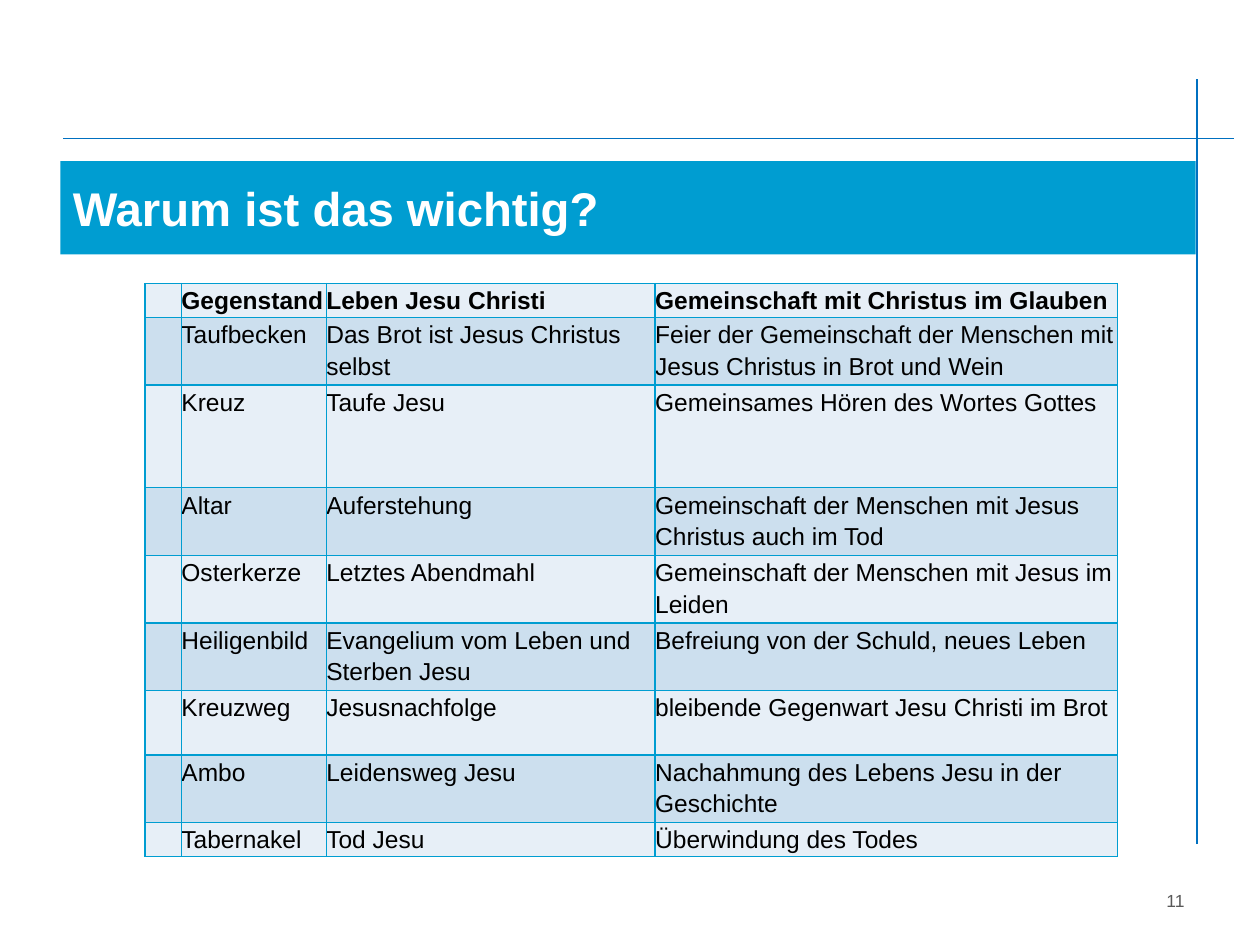
from typing import NamedTuple

from lxml import etree
from pptx import Presentation
from pptx import util as u
from pptx.dml.color import RGBColor
from pptx.enum import shapes, text
from pptx.oxml.ns import qn

WIDE, HIGH = 10, 7.5
FONT = "Arial"
HEX = {
    "band": "009DD1", "rule": "0070C0", "white": "FFFFFF", "black": "000000",
    "grey": "595959", "pale": "E7EFF7", "blue": "CCDFEE",
}
LINE = 0.255  # height of one text line in the table
COLS = (0.29, 1.15, 2.61, 3.67)


class Box(NamedTuple):
    """Left, top, width and height as shares of the slide."""
    x: float
    y: float
    w: float
    h: float

    def lengths(self) -> list[int]:
        return [u.Inches(part * size) for part, size
                in zip(self, (WIDE, HIGH, WIDE, HIGH))]


class Rule(NamedTuple):
    """Start and end in inches."""
    x1: float
    y1: float
    x2: float
    y2: float


class Row(NamedTuple):
    lines: float
    item: str
    life: str
    faith: str


RULES = (Rule(0.5, 1.1, 9.79, 1.1), Rule(9.5, 6.7, 9.5, 0.63))
TITLE = Box(0.048, 1.28 / HIGH, 0.901, 0.74 / HIGH)
PAGE = Box(0.717, 6.95 / HIGH, 0.233, 0.4 / HIGH)
GRID = Box(0.115, 0.3, sum(COLS) / WIDE, 0.58)
ROWS = (
    Row(1, "Gegenstand", "Leben Jesu Christi", "Gemeinschaft mit Christus im Glauben"),
    Row(2, "Taufbecken", "Das Brot ist Jesus Christus selbst",
        "Feier der Gemeinschaft der Menschen mit Jesus Christus in Brot und Wein"),
    Row(3.2, "Kreuz", "Taufe Jesu", "Gemeinsames Hören des Wortes Gottes"),
    Row(2, "Altar", "Auferstehung",
        "Gemeinschaft der Menschen mit Jesus Christus auch im Tod"),
    Row(2, "Osterkerze", "Letztes Abendmahl",
        "Gemeinschaft der Menschen mit Jesus im Leiden"),
    Row(2, "Heiligenbild", "Evangelium vom Leben und Sterben Jesu",
        "Befreiung von der Schuld, neues Leben"),
    Row(2, "Kreuzweg", "Jesusnachfolge", "bleibende Gegenwart Jesu Christi im Brot"),
    Row(2, "Ambo", "Leidensweg Jesu", "Nachahmung des Lebens Jesu in der Geschichte"),
    Row(1, "Tabernakel", "Tod Jesu", "Überwindung des Todes"),
)


def tint(name: str) -> RGBColor:
    return RGBColor.from_string(HEX[name])


def write(frame, words: str, size: float, color: str, bold: bool = False,
          align=text.PP_ALIGN.LEFT, space: float = 1.0) -> None:
    frame.word_wrap = True
    par = frame.paragraphs[0]
    par.text = words
    par.alignment = align
    par.line_spacing = space
    font = par.font
    font.name, font.size, font.bold = FONT, u.Pt(size), bold
    font.color.rgb = tint(color)


def draw_rule(slide, rule: Rule) -> None:
    line = slide.shapes.add_connector(
        shapes.MSO_CONNECTOR.STRAIGHT, *(u.Inches(n) for n in rule))
    line.line.color.rgb = tint("rule")
    line.line.width = u.Pt(1)
    etree.SubElement(line._element.spPr, qn("a:effectLst"))


def draw_title(slide) -> None:
    band = slide.shapes.add_shape(shapes.MSO_SHAPE.RECTANGLE, *TITLE.lengths())
    band.shadow.inherit = False
    band.fill.solid()
    band.fill.fore_color.rgb = tint("band")
    band.line.fill.background()
    band.text_frame.vertical_anchor = text.MSO_ANCHOR.TOP
    write(band.text_frame, "Warum ist das wichtig?", 27, "white", True, space=1.2)


def draw_page(slide) -> None:
    frame = slide.shapes.add_textbox(*PAGE.lengths()).text_frame
    frame.vertical_anchor = text.MSO_ANCHOR.MIDDLE
    write(frame, "11", 10, "grey", align=text.PP_ALIGN.RIGHT)


def edge(cell) -> None:
    """Put a thin border on all four sides of the cell."""
    props = cell._tc.get_or_add_tcPr()
    for spot, side in enumerate(("lnL", "lnR", "lnT", "lnB")):
        line = etree.Element(qn(f"a:{side}"), w=str(u.Pt(1)))
        fill = etree.SubElement(line, qn("a:solidFill"))
        etree.SubElement(fill, qn("a:srgbClr"), val=HEX["band"])
        props.insert(spot, line)


def draw_cell(cell, words: str, fill: str, bold: bool) -> None:
    cell.margin_left = cell.margin_right = cell.margin_top = cell.margin_bottom = 0
    cell.fill.solid()
    cell.fill.fore_color.rgb = tint(fill)
    edge(cell)
    write(cell.text_frame, words, 14, "black", bold, space=1.15)
    if not words:  # keeps an empty cell as low as its row
        end = etree.SubElement(cell.text_frame.paragraphs[0]._p, qn("a:endParaRPr"))
        end.set("sz", "1400")


def draw_table(slide) -> None:
    table = slide.shapes.add_table(len(ROWS), len(COLS), *GRID.lengths()).table
    table.horz_banding = False
    for col, width in zip(table.columns, COLS):
        col.width = u.Inches(width)
    for r, row in enumerate(ROWS):
        table.rows[r].height = u.Inches(row.lines * LINE)
        fill = "blue" if r % 2 else "pale"
        for c, words in enumerate(("", row.item, row.life, row.faith)):
            draw_cell(table.cell(r, c), words, fill, r == 0)


def main() -> None:
    deck = Presentation()
    deck.slide_width, deck.slide_height = u.Inches(WIDE), u.Inches(HIGH)
    slide = deck.slides.add_slide(deck.slide_layouts[6])
    for rule in RULES:
        draw_rule(slide, rule)
    draw_title(slide)
    draw_page(slide)
    draw_table(slide)
    deck.save("out.pptx")


if __name__ == "__main__":
    main()
